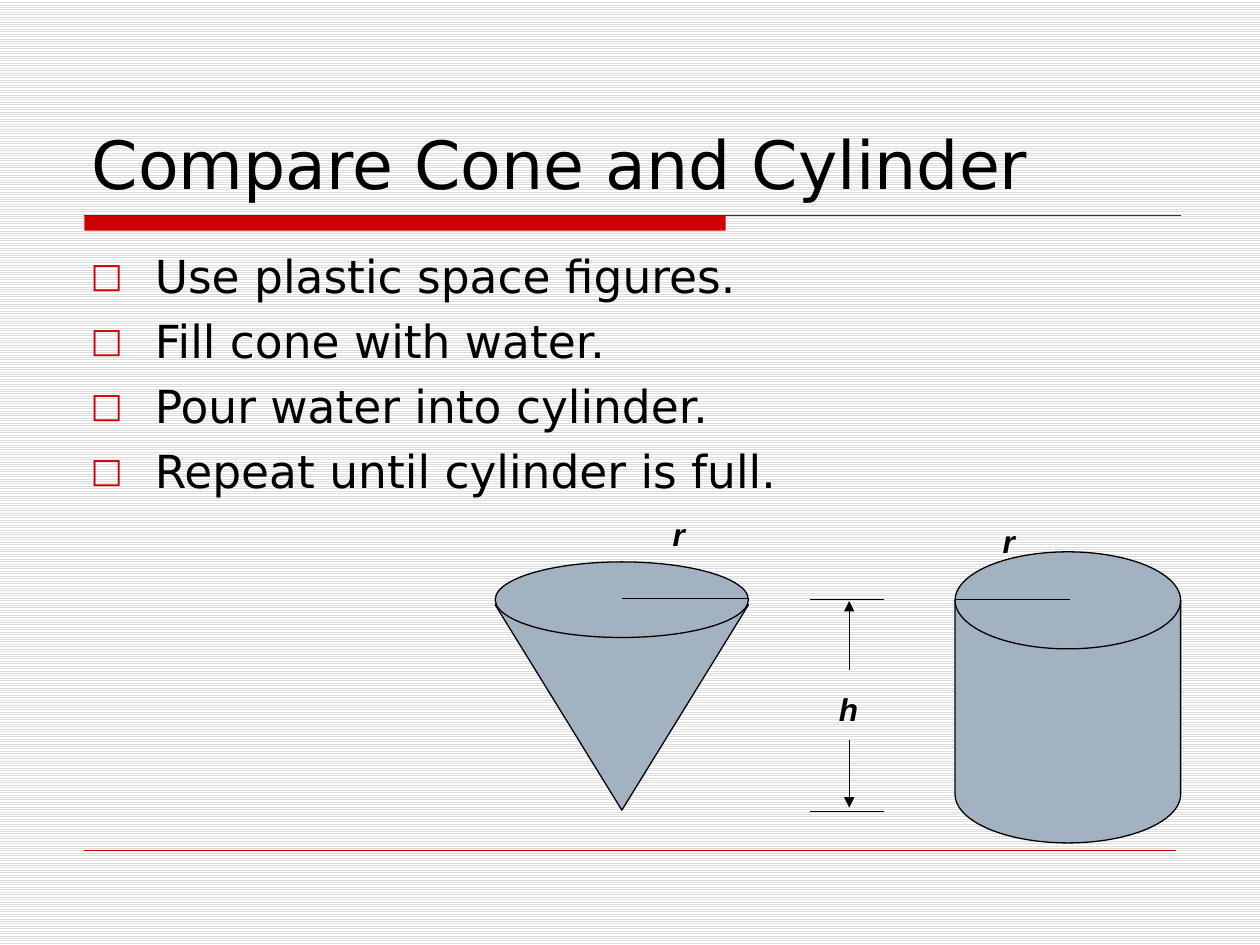
import pptx
import pptx.dml.color
import pptx.enum.dml
import pptx.enum.shapes
import pptx.enum.text
import pptx.oxml
import pptx.oxml.ns
import pptx.util
from lxml import etree

COLUMNS, ROWS = 100, 75
CELL = pptx.util.Inches(10) // COLUMNS
BLACK, RED, STEEL = "000000", "CC0000", "A3B2C1"
HEADING_FONT, LABEL_FONT = "DejaVu Sans", "Arial"
STEPS = [
    "Use plastic space figures.",
    "Fill cone with water.",
    "Pour water into cylinder.",
    "Repeat until cylinder is full.",
]


def grid(*cells):
    """Turn counts of grid cells into lengths."""
    return [round(count * CELL) for count in cells]


def color(hex_string):
    return pptx.dml.color.RGBColor.from_string(hex_string)


def add_element(parent, tag, **attributes):
    element = etree.SubElement(parent, pptx.oxml.ns.qn(tag))
    for name, value in attributes.items():
        element.set(name, value)
    return element


def set_background(slide):
    fill = slide.background.fill
    fill.patterned()
    fill.pattern = pptx.enum.dml.MSO_PATTERN.LIGHT_HORIZONTAL
    fill.fore_color.rgb = color("DDDDDD")
    fill.back_color.rgb = color("FFFFFF")


def add_solid(shapes, kind, box, fill, outlined=True):
    shape = shapes.add_shape(kind, *grid(*box))
    shape.shadow.inherit = False
    shape.fill.solid()
    shape.fill.fore_color.rgb = color(fill)
    if outlined:
        shape.line.color.rgb = color(BLACK)
        shape.line.width = pptx.util.Pt(0.75)
    else:
        shape.line.fill.background()
    return shape


def add_line(shapes, start, end, stroke=BLACK, width=0.75, arrow=False):
    line = shapes.add_connector(
        pptx.enum.shapes.MSO_CONNECTOR.STRAIGHT, *grid(*start, *end))
    line.line.color.rgb = color(stroke)
    line.line.width = pptx.util.Pt(width)
    if arrow:
        add_element(line.line._get_or_add_ln(), "a:tailEnd", type="triangle")
    add_element(line._element.spPr, "a:effectLst")


def add_run(paragraph, text, font, size, emphasis=False):
    run = paragraph.add_run()
    run.text = text
    run.font.name = font
    run.font.size = pptx.util.Pt(size)
    run.font.bold = run.font.italic = emphasis
    run.font.color.rgb = color(BLACK)


def add_text_frame(shapes, box, wrap=True):
    frame = shapes.add_textbox(*grid(*box)).text_frame
    frame.word_wrap = wrap
    return frame


def add_title(shapes, text):
    frame = add_text_frame(shapes, (6.3, 3.3, 87.5, 13.3))
    frame.vertical_anchor = pptx.enum.text.MSO_ANCHOR.BOTTOM
    add_run(frame.paragraphs[0], text, HEADING_FONT, 38)


def add_bullets(shapes, lines):
    frame = add_text_frame(shapes, (6.2, 19.2, 89.2, 23))
    for index, text in enumerate(lines):
        paragraph = frame.add_paragraph() if index else frame.paragraphs[0]
        paragraph.space_before = pptx.util.Pt(6)
        properties = paragraph._p.get_or_add_pPr()
        indent = grid(5.1)[0]
        properties.set("marL", str(indent))
        properties.set("indent", str(-indent))
        add_element(add_element(properties, "a:buClr"), "a:srgbClr", val=RED)
        add_element(properties, "a:buSzPct", val="75000")
        add_element(properties, "a:buFont", typeface=HEADING_FONT)
        add_element(properties, "a:buChar", char="□")
        add_run(paragraph, text, HEADING_FONT, 26)


def add_label(shapes, text, left, top, width):
    frame = add_text_frame(shapes, (left, top, width, 4), wrap=False)
    add_run(frame.paragraphs[0], text, LABEL_FONT, 18, emphasis=True)


def add_rules(shapes):
    """Draw the red bar and line under the title and the line at the foot."""
    rectangle = pptx.enum.shapes.MSO_SHAPE.RECTANGLE
    add_solid(shapes, rectangle, (6.7, 17.1, 50.9, 1.2), RED, outlined=False)
    add_line(shapes, (6.7, 17.1), (93.7, 17.1), stroke="333333")
    add_line(shapes, (6.7, 67.5), (93.3, 67.5), stroke=RED, width=0.25)


def add_cylinder(shapes):
    disk = pptx.enum.shapes.MSO_SHAPE.FLOWCHART_MAGNETIC_DISK
    add_solid(shapes, disk, (75.8, 43.8, 17.9, 23.1), STEEL)
    add_line(shapes, (84.9, 47.6), (75.8, 47.6))
    add_label(shapes, "r", 78.6, 40.9, 3)


def add_cone(shapes):
    kinds = pptx.enum.shapes.MSO_SHAPE
    left, width = 39.3, 20.1
    side = add_solid(
        shapes, kinds.ISOSCELES_TRIANGLE, (left, 48, width, 16.3), STEEL)
    side.rotation = 180
    add_solid(shapes, kinds.OVAL, (left, 44.6, width, 6), STEEL)
    add_line(shapes, (left + width / 2, 47.5), (left + width, 47.5))
    add_label(shapes, "r", 52.4, 40.4, 3)


def add_height_mark(shapes):
    center = 67.4
    for end, arrow_start, arrow_end in ((47.6, 53.2, 47.7), (64.4, 58.7, 64.1)):
        add_line(shapes, (64.3, end), (70.2, end))
        add_line(shapes, (center, arrow_start), (center, arrow_end), arrow=True)
    add_label(shapes, "h", 65.6, 54.3, 3.5)


def main():
    presentation = pptx.Presentation()
    presentation.slide_width = COLUMNS * CELL
    presentation.slide_height = ROWS * CELL
    slide = presentation.slides.add_slide(presentation.slide_layouts[6])
    set_background(slide)
    add_rules(slide.shapes)
    add_title(slide.shapes, "Compare Cone and Cylinder")
    add_bullets(slide.shapes, STEPS)
    for add_figure in (add_cylinder, add_cone, add_height_mark):
        add_figure(slide.shapes.add_group_shape().shapes)
    presentation.save("out.pptx")


if __name__ == "__main__":
    main()
